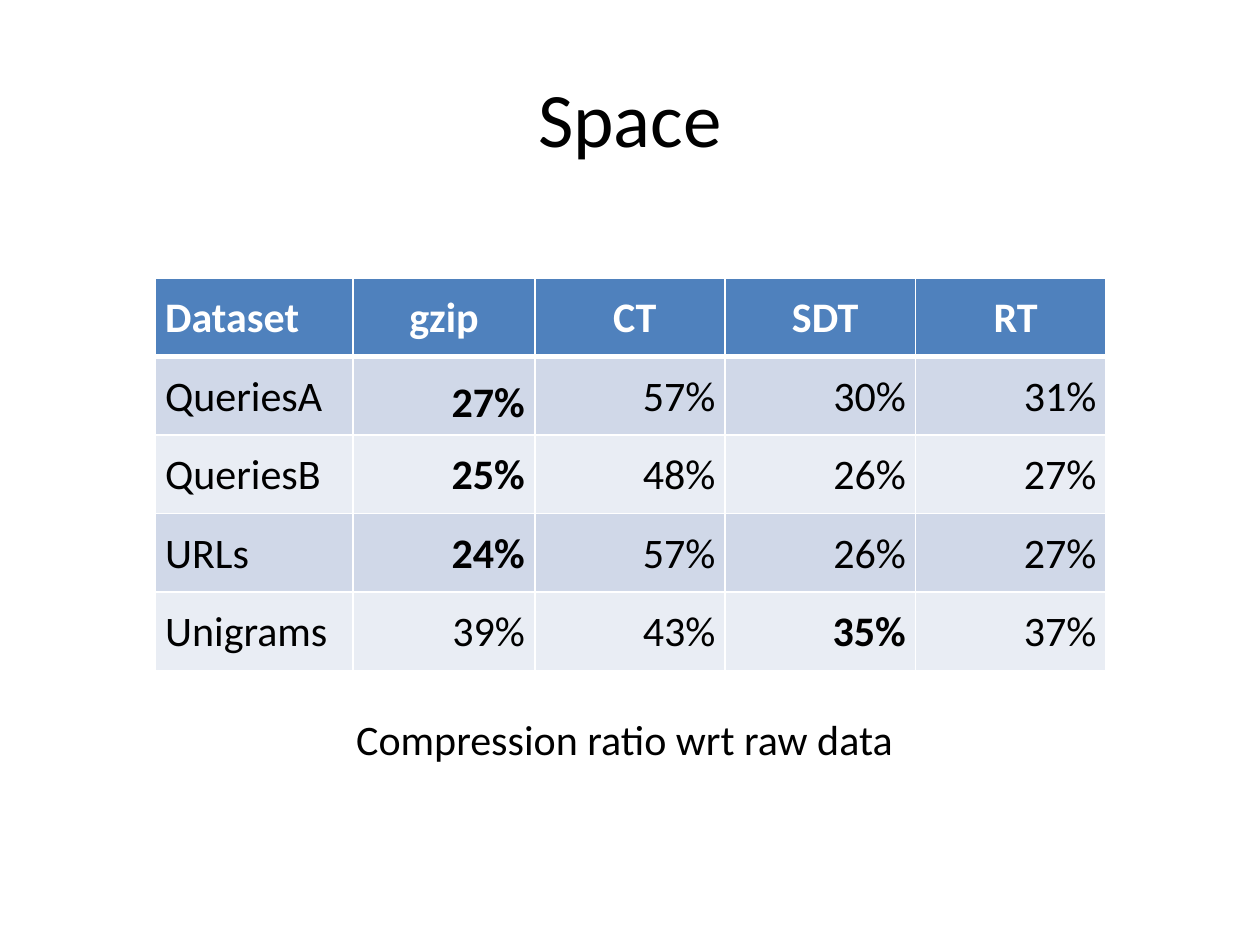
from pptx import Presentation
from pptx import util as u
from pptx.dml.color import RGBColor
from pptx.enum import text
from pptx.oxml.ns import qn
from lxml import etree

BLACK = RGBColor(0x00, 0x00, 0x00)
WHITE = RGBColor(0xFF, 0xFF, 0xFF)
HEADER_BLUE = RGBColor(0x4F, 0x81, 0xBD)
BANDS = (RGBColor(0xD0, 0xD8, 0xE8), RGBColor(0xE9, 0xED, 0xF4))

HEADINGS = ["Dataset", "gzip", " CT", " SDT", " RT"]
RATIOS = [
    ["QueriesA", "27%", "57%", "30%", "31%"],
    ["QueriesB", "25%", "48%", "26%", "27%"],
    ["URLs", "24%", "57%", "26%", "27%"],
    ["Unigrams", "39%", "43%", "35%", "37%"],
]
BEST = {(1, 1), (2, 1), (3, 1), (4, 3)}
TIGHT = (1, 1)  # the one cell with smaller vertical margins
COLUMN_WIDTHS = [3.99, 3.66, 3.84, 3.84, 3.84]
ROW_HEIGHT = 1.58

LEFT, CENTER, RIGHT = (text.PP_ALIGN.LEFT, text.PP_ALIGN.CENTER,
                       text.PP_ALIGN.RIGHT)


def write(frame, words, size=24, color=BLACK, bold=False, align=LEFT,
          font="Calibri"):
    paragraph = frame.paragraphs[0]
    paragraph.alignment = align
    run = paragraph.add_run()
    run.text = words
    run.font.name = font
    run.font.size = u.Pt(size)
    run.font.bold = bold
    run.font.color.rgb = color


def set_borders(cell, color, widths):
    """Draw the cell's sides; widths maps L, R, T, B to points."""
    properties = cell._tc.get_or_add_tcPr()
    for position, (side, width) in enumerate(widths.items()):
        line = etree.Element(qn(f"a:ln{side}"), w=str(u.Pt(width)))
        fill = etree.SubElement(line, qn("a:solidFill"))
        etree.SubElement(fill, qn("a:srgbClr"), val=str(color))
        properties.insert(position, line)


class SlideBuilder:
    def __init__(self, presentation):
        self.slide = presentation.slides.add_slide(
            presentation.slide_layouts[5])

    def title(self, words, left, top, width, height):
        title = self.slide.shapes.title
        title.left, title.top = u.Cm(left), u.Cm(top)
        title.width, title.height = u.Cm(width), u.Cm(height)
        title.text_frame.vertical_anchor = text.MSO_ANCHOR.MIDDLE
        write(title.text_frame, words, size=44, align=CENTER)

    def ratio_table(self, left, top):
        rows = [HEADINGS] + RATIOS
        table = self.slide.shapes.add_table(
            len(rows), len(HEADINGS), u.Cm(left), u.Cm(top),
            u.Cm(sum(COLUMN_WIDTHS)), u.Cm(ROW_HEIGHT * len(rows))).table
        for column, width in zip(table.columns, COLUMN_WIDTHS):
            column.width = u.Cm(width)
        for r, row in enumerate(rows):
            table.rows[r].height = u.Cm(ROW_HEIGHT)
            for c, words in enumerate(row):
                self.ratio_cell(table.cell(r, c), r, c, words)

    def ratio_cell(self, cell, r, c, words):
        header = r == 0
        cell.vertical_anchor = text.MSO_ANCHOR.BOTTOM
        cell.margin_left = cell.margin_right = u.Cm(0.2)
        tight = (r, c) == TIGHT
        cell.margin_top = u.Cm(0.18 if tight else 0.3)
        cell.margin_bottom = u.Cm(0.13 if tight else 0.25)
        cell.fill.solid()
        cell.fill.fore_color.rgb = HEADER_BLUE if header else BANDS[(r - 1) % 2]
        set_borders(cell, WHITE, {"L": 1, "R": 1, "T": 3 if r == 1 else 1,
                                  "B": 3 if header else 1})
        align = LEFT if c == 0 else CENTER if header else RIGHT
        write(cell.text_frame, words, color=WHITE if header else BLACK,
              bold=header or (r, c) in BEST, align=align)

    def caption(self, words, left, top, width, height):
        box = self.slide.shapes.add_textbox(
            u.Cm(left), u.Cm(top), u.Cm(width), u.Cm(height))
        box.text_frame.word_wrap = False
        box.text_frame.auto_size = text.MSO_AUTO_SIZE.SHAPE_TO_FIT_TEXT
        write(box.text_frame, words)


def main():
    presentation = Presentation()
    presentation.slide_width = u.Cm(25.4)
    presentation.slide_height = u.Cm(19.05)
    builder = SlideBuilder(presentation)
    builder.title("Space", 1.27, 0.76, 22.86, 3.18)
    builder.ratio_table(3.13, 5.6)
    builder.caption("Compression ratio wrt raw data", 6.93, 14.25, 11.5, 1.28)
    presentation.save("out.pptx")


if __name__ == "__main__":
    main()
